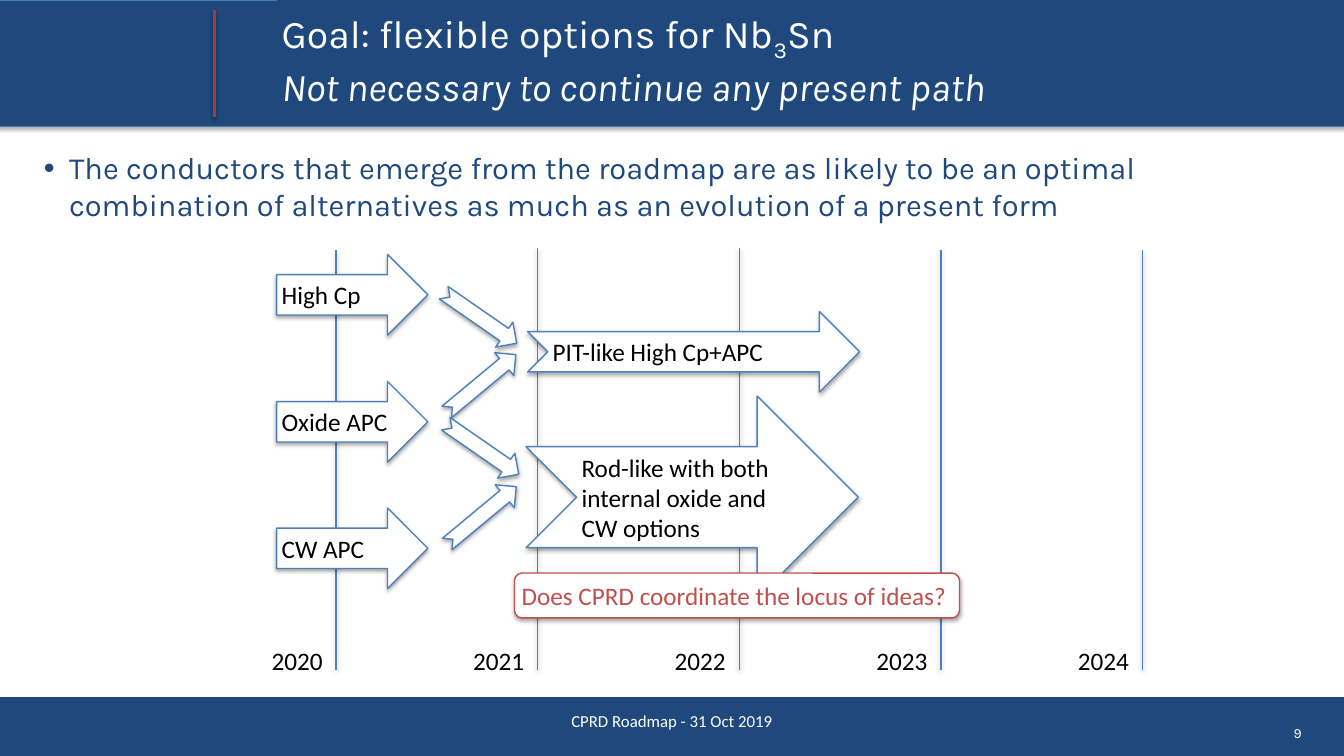
from lxml import etree
from pptx import Presentation
from pptx.dml.color import RGBColor
from pptx.enum.shapes import MSO_CONNECTOR as Link, MSO_SHAPE as Form
from pptx.enum.text import MSO_ANCHOR as Anchor, MSO_AUTO_SIZE as Fit, PP_ALIGN as Align
from pptx.oxml import parse_xml
from pptx.oxml.ns import nsdecls, qn
from pptx.util import Pt

PX = 9144  # 100 px to the inch
NAVY = RGBColor(0x1F, 0x49, 0x7D)
EDGE = RGBColor(0x4A, 0x7E, 0xBB)
BLUE = RGBColor(0x4F, 0x81, 0xBD)
RED = RGBColor(0xC0, 0x50, 0x4D)
RUST = RGBColor(0x9A, 0x40, 0x3E)
WHITE = RGBColor(0xFF, 0xFF, 0xFF)
BLACK = RGBColor(0, 0, 0)


def dress(item, color, width, alpha=35):
    """Outline with a soft shadow below."""
    item.line.color.rgb = color
    item.line.width = Pt(width)
    item._element.spPr.append(parse_xml(
        f'<a:effectLst {nsdecls("a")}><a:outerShdw blurRad="{Pt(6)}" dist="{Pt(3)}" '
        f'dir="5400000" rotWithShape="0"><a:srgbClr val="000000">'
        f'<a:alpha val="{alpha}000"/></a:srgbClr></a:outerShdw></a:effectLst>'))


def write(item, text, size, color, face="Calibri", align=Align.LEFT,
          anchor=Anchor.MIDDLE, wrap=True):
    """Fill the first paragraph; a bar in the text starts a new run."""
    frame = item.text_frame
    look = {"margin_left": 10 * PX, "margin_right": 10 * PX, "margin_top": 10 * PX,
            "margin_bottom": 10 * PX, "word_wrap": wrap, "auto_size": Fit.NONE,
            "vertical_anchor": anchor}
    for key, value in look.items():
        setattr(frame, key, value)
    para = frame.paragraphs[0]
    para.alignment = align
    for part in text.split("|"):
        run = para.add_run()
        run.text = part
        run.font.name, run.font.size = face, Pt(size)
        run.font.color.rgb = color
    return para


deck = Presentation()
deck.slide_width, deck.slide_height = 2667 * PX, 1500 * PX
slide = deck.slides.add_slide(deck.slide_layouts[1])
shapes = slide.shapes
title, body = shapes.title, slide.placeholders[1]

# Footer bar, header bar and header rule, all behind the title
foot = shapes.add_shape(Form.RECTANGLE, -4 * PX, 1383 * PX, 2674 * PX, 119 * PX)
foot.shadow.inherit = False
foot.line.fill.background()
head = shapes.add_shape(Form.RECTANGLE, -7 * PX, 0, 2679 * PX, 250 * PX)
dress(head, EDGE, 1)
for bar in (foot, head):
    bar.fill.solid()
    bar.fill.fore_color.rgb = NAVY
rule = shapes.add_connector(Link.STRAIGHT, 425 * PX, 233 * PX, 425 * PX, 20 * PX)
dress(rule, RUST, 4, 38)
for spot, item in enumerate((foot, head, rule), 2):
    shapes._spTree.insert(spot, item._element)

# Title
for item, box in ((title, (549, -3, 2121, 242)), (body, (77, 286, 2436, 187))):
    item.left, item.top, item.width, item.height = [n * PX for n in box]
title.fill.solid()
title.fill.fore_color.rgb = NAVY
para = write(title, "Goal: flexible options for Nb|3|Sn|"
             "Not necessary to continue any present path", 56, WHITE, "Karla")
goal, sub, tin, motto = para.runs
sub.font._element.set("baseline", "-25000")
motto.font.italic = True
para.add_line_break()
tin._r.addnext(para._p.find(qn("a:br")))

# Bullet
para = write(body, "The conductors that emerge from the roadmap are as likely to be "
             "an optimal combination of alternatives as much as an evolution of a "
             "present form", 44, NAVY, "Karla", anchor=Anchor.TOP)
para.space_before = Pt(0)
props = para._p.get_or_add_pPr()
props.set("marL", str(50 * PX))
props.set("indent", str(-50 * PX))
etree.SubElement(props, qn("a:buFont")).set("typeface", "Arial")
etree.SubElement(props, qn("a:buChar")).set("char", "•")

# Page number and footer
page = shapes.add_textbox(2540 * PX, 1428 * PX, 53 * PX, 51 * PX)
write(page, "9", 20, WHITE, "Karla", Align.RIGHT, wrap=False)
note = shapes.add_textbox(883 * PX, 1390 * PX, 900 * PX, 80 * PX)
write(note, "CPRD Roadmap - 31 Oct 2019", 24, WHITE, align=Align.CENTER)

# Year lines
for step in range(5):
    x = 667 + 400 * step
    top = 492 if step in (1, 2) else 496
    line = shapes.add_connector(Link.STRAIGHT, x * PX, 1329 * PX, x * PX, top * PX)
    dress(line, BLUE, 2)
    year = shapes.add_textbox((x - 138) * PX, 1271 * PX, 123 * PX, 81 * PX)
    write(year, str(2020 + step), 36, BLACK, anchor=Anchor.TOP, wrap=False)

# Conductor options, the arrows that join them, and the question
PLAIN, NOTCH = Form.RIGHT_ARROW, Form.NOTCHED_RIGHT_ARROW
UP, DOWN = 320.3, 34.7
parts = [
    (PLAIN, 549, 505, 300, 160, 0, "High Cp", BLUE, BLACK),
    (PLAIN, 549, 757, 300, 160, 0, "Oxide APC", BLUE, BLACK),
    (PLAIN, 549, 1008, 300, 160, 0, "CW APC", BLUE, BLACK),
    (NOTCH, 1047, 618, 659, 160, 0, "PIT-like High Cp+APC", BLUE, BLACK),
    (NOTCH, 1044, 786, 659, 401, 0,
     "Rod-like with both internal oxide and CW options", BLUE, BLACK),
    (NOTCH, 866, 731, 178, 59, UP, "", BLUE, BLACK),
    (NOTCH, 865, 601, 176, 60, DOWN, "", BLUE, BLACK),
    (NOTCH, 869, 861, 176, 60, DOWN, "", BLUE, BLACK),
    (NOTCH, 867, 993, 178, 59, UP, "", BLUE, BLACK),
    (Form.ROUNDED_RECTANGLE, 1021, 1137, 883, 89, 0,
     "Does CPRD coordinate the locus of ideas?", RED, RED),
]
for form, x, y, w, h, turn, text, edge, ink in parts:
    part = shapes.add_shape(form, x * PX, y * PX, w * PX, h * PX)
    part.rotation = turn
    part.fill.solid()
    part.fill.fore_color.rgb = WHITE
    dress(part, edge, 2)
    if text:
        write(part, text, 36, ink)

deck.save("out.pptx")
